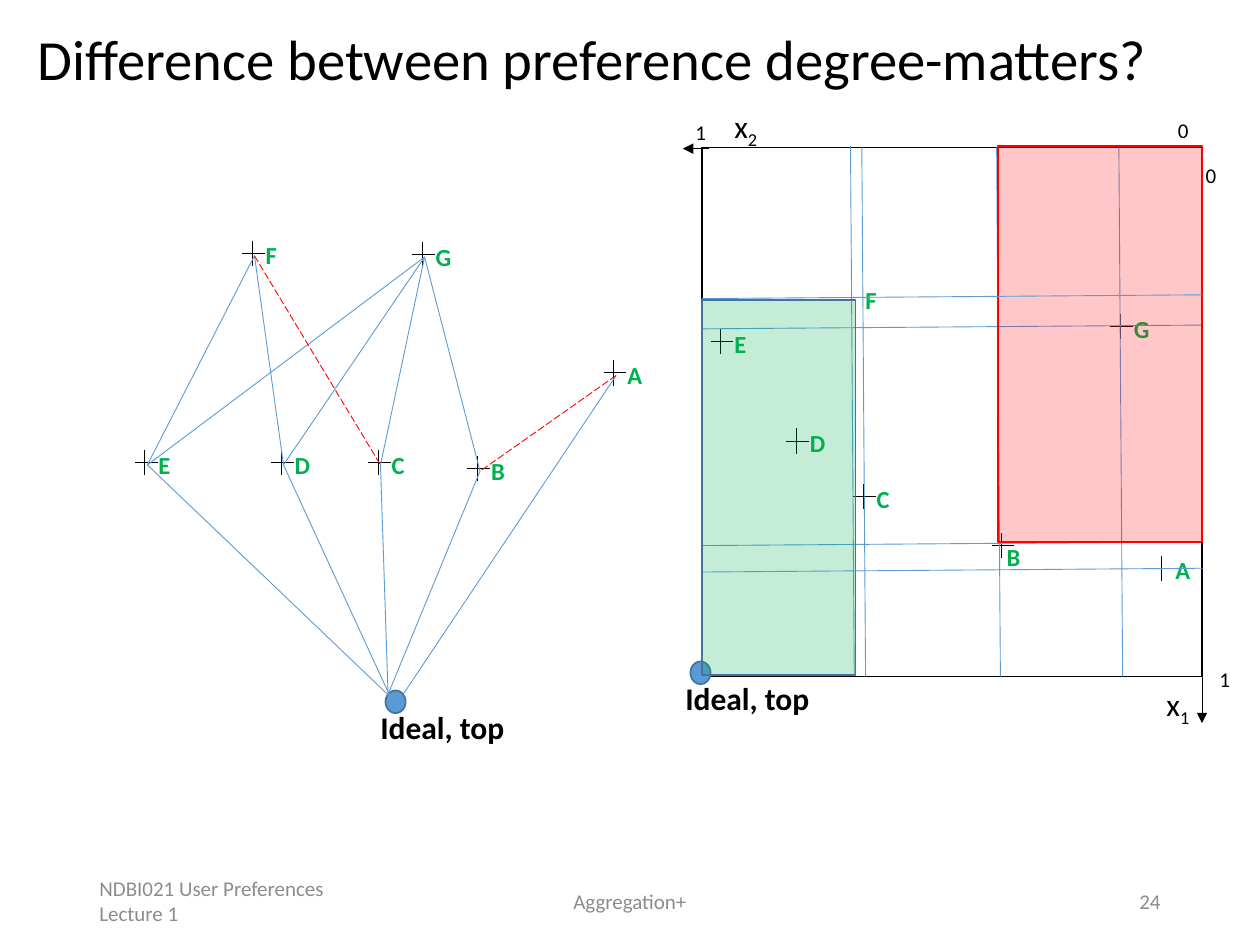
from dataclasses import dataclass

from lxml.etree import SubElement
from pptx import Presentation
from pptx.dml.color import RGBColor
from pptx.enum.dml import MSO_LINE
from pptx.enum.shapes import MSO_CONNECTOR, MSO_SHAPE
from pptx.enum.text import MSO_ANCHOR, MSO_AUTO_SIZE, PP_ALIGN
from pptx.oxml.ns import qn
from pptx.util import Emu, Pt

PX = 9144  # 100 px to the inch
BLACK = RGBColor(0x00, 0x00, 0x00)
GREEN = RGBColor(0x00, 0xB0, 0x50)
RED = RGBColor(0xFF, 0x00, 0x00)
BLUE = RGBColor(0x5B, 0x9B, 0xD5)
NAVY = RGBColor(0x43, 0x73, 0x9E)
GRAY = RGBColor(0x8C, 0x8C, 0x8C)
WIDTHS = {"A": 32, "B": 32, "C": 31, "D": 33, "E": 30, "F": 29, "G": 33}


@dataclass(frozen=True)
class Mark:
    name: str
    x: int
    y: int
    dx: int = 1  # label offset from the cross
    dy: int = -15


@dataclass(frozen=True)
class Line:
    x1: int
    y1: int
    x2: int
    y2: int
    color: RGBColor = BLUE
    dash: bool = False
    arrow: bool = False


def px(*values: int) -> list[Emu]:
    return [Emu(v * PX) for v in values]


def write(slide, text: str, x: int, y: int, w: int, h: int, *, size: float = 12,
          color: RGBColor = BLACK, bold: bool = False, sub: str = "",
          wrap: bool = False, grow: bool = True, align=PP_ALIGN.LEFT,
          anchor=MSO_ANCHOR.TOP, box=None) -> None:
    if box is None:
        box = slide.shapes.add_textbox(*px(x, y, w, h))
    else:
        box.left, box.top, box.width, box.height = px(x, y, w, h)
    frame = box.text_frame
    frame.word_wrap = wrap
    frame.auto_size = MSO_AUTO_SIZE.SHAPE_TO_FIT_TEXT if grow else MSO_AUTO_SIZE.NONE
    frame.vertical_anchor = anchor
    para = frame.paragraphs[0]
    para.alignment = align
    for part in filter(None, (text, sub)):
        run = para.add_run()
        run.text = part
        font = run.font
        font.name, font.size, font.bold = "Calibri", Pt(size), bold
        font.color.rgb = color
        if part == sub:
            run._r.get_or_add_rPr().set("baseline", "-25000")


def draw(slide, line: Line) -> None:
    link = slide.shapes.add_connector(
        MSO_CONNECTOR.STRAIGHT, *px(line.x1, line.y1, line.x2, line.y2))
    link.line.color.rgb = line.color
    link.line.width = Pt(0.5)
    if line.dash:
        link.line.dash_style = MSO_LINE.LONG_DASH
    if line.arrow:
        SubElement(link.line._get_or_add_ln(), qn("a:tailEnd"), type="triangle")
    SubElement(link._element.spPr, qn("a:effectLst"))


def shape(slide, kind, x: int, y: int, w: int, h: int, edge: RGBColor,
          fill: RGBColor | None = None, alpha: int = 100) -> None:
    item = slide.shapes.add_shape(kind, *px(x, y, w, h))
    item.shadow.inherit = False
    item.line.color.rgb = edge
    item.line.width = Pt(1)
    if fill is None:
        item.fill.background()
        return
    item.fill.solid()
    item.fill.fore_color.rgb = fill
    if alpha < 100:
        tint = item._element.spPr.find(qn("a:solidFill"))[0]
        SubElement(tint, qn("a:alpha"), val=str(alpha * 1000))


def plot(slide, mark: Mark) -> None:
    x, y = mark.x, mark.y
    draw(slide, Line(x, y - 10, x, y + 10, BLACK))
    draw(slide, Line(x - 8, y, x + 10, y, BLACK))
    write(slide, mark.name, x + mark.dx, y + mark.dy, WIDTHS[mark.name], 34,
          size=14, color=GREEN, bold=True)


def ideal(slide, x: int, y: int) -> None:
    shape(slide, MSO_SHAPE.OVAL, x, y, 16, 18, NAVY, BLUE)
    write(slide, "Ideal, top", x - 14, y + 9, 119, 40, size=18, bold=True, wrap=True)


def square(slide) -> None:
    # Frame, scale ends and axes
    shape(slide, MSO_SHAPE.RECTANGLE, 557, 117, 397, 420, BLACK)
    for text, x, y in (("0", 925, 88), ("0", 947, 124), ("1", 958, 524), ("1", 542, 90)):
        write(slide, text, x, y, 29, 30)
    draw(slide, Line(563, 118, 542, 118, BLACK, arrow=True))
    draw(slide, Line(954, 537, 954, 574, BLACK, arrow=True))
    for sub, x, y in (("1", 916, 539), ("2", 573, 80)):
        write(slide, "x", x, y, 47, 40, size=18, sub=sub, wrap=True)

    # Items and the ideal point
    for mark in (Mark("A", 922, 451), Mark("B", 795, 433, -6, -8),
                 Mark("C", 685, 394), Mark("D", 632, 350), Mark("E", 572, 271),
                 Mark("F", 676, 236), Mark("G", 889, 259)):
        plot(slide, mark)
    ideal(slide, 548, 525)

    # Slightly tilted guide lines, with the two tinted regions between them
    for x in (888, 791):
        draw(slide, Line(x, 117, x + 3, 537))
    for y in (258, 430):
        draw(slide, Line(954, y, 557, y + 3))
    shape(slide, MSO_SHAPE.RECTANGLE, 792, 116, 162, 314, RED, RED, 22)
    draw(slide, Line(675, 116, 678, 536))
    draw(slide, Line(954, 234, 557, 237))
    shape(slide, MSO_SHAPE.RECTANGLE, 557, 238, 122, 298, NAVY, GREEN, 23)
    draw(slide, Line(955, 451, 558, 454))
    draw(slide, Line(684, 117, 687, 537))


def graph(slide) -> None:
    marks = (Mark("A", 487, 296), Mark("G", 335, 202), Mark("F", 200, 201),
             Mark("E", 115, 367), Mark("D", 223, 367), Mark("C", 300, 367),
             Mark("B", 379, 372))
    for mark in marks:
        plot(slide, mark)
    ideal(slide, 306, 548)

    # Order edges, solid where certain and dashed where it differs
    ends = {m.name: (m.x + 2, m.y + 2) for m in marks}
    for low, high in ("BG", "CG", "DG", "EG", "EF", "DF"):
        draw(slide, Line(*ends[low], *ends[high]))
    feet = {"A": (320, 551), "B": (308, 551), "C": (308, 551),
            "D": (313, 560), "E": (318, 561)}
    for name, foot in feet.items():
        draw(slide, Line(*ends[name], *foot))
    for high, low in ("AB", "FC"):
        draw(slide, Line(*ends[high], *ends[low], RED, dash=True))


def main() -> None:
    deck = Presentation()
    deck.slide_width, deck.slide_height = px(1000, 750)
    slide = deck.slides.add_slide(deck.slide_layouts[5])

    # Title
    title = slide.shapes.title
    write(slide, "Difference between preference degree-matters?", 20, 20, 952, 63,
          size=32.4, wrap=True, grow=False, box=title)
    title.text_frame.paragraphs[0].line_spacing = 0.9

    square(slide)
    graph(slide)

    # Footer
    for text, x, w, align in (
            ("NDBI021 User Preferences Lecture 1", 69, 225, PP_ALIGN.LEFT),
            ("Aggregation+", 331, 338, PP_ALIGN.CENTER),
            ("24", 706, 225, PP_ALIGN.RIGHT)):
        write(slide, text, x, 695, w, 40, color=GRAY, wrap=True, grow=False,
              align=align, anchor=MSO_ANCHOR.MIDDLE)

    deck.save("out.pptx")


if __name__ == "__main__":
    main()
